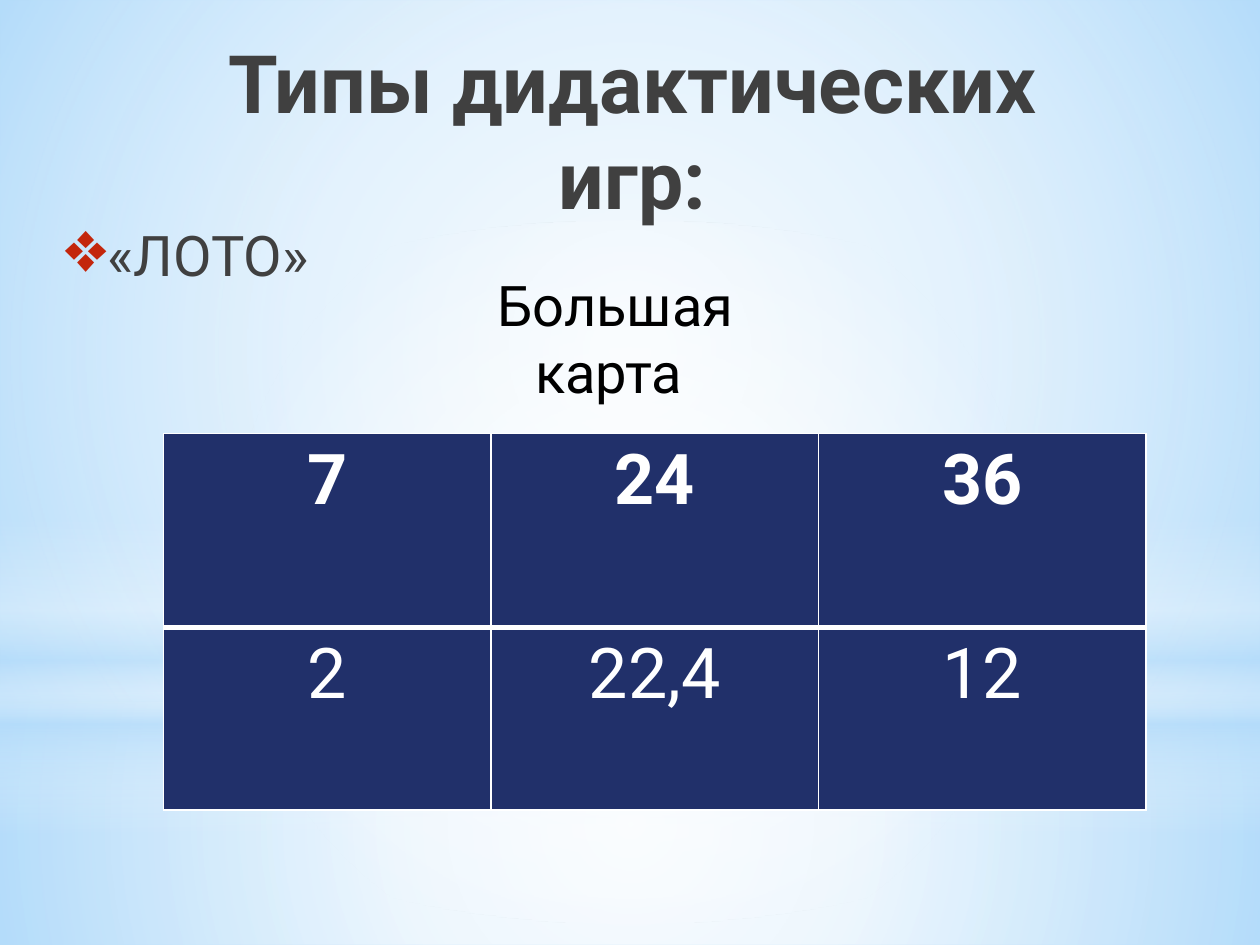
"""Build a slide about lotto as a type of didactic game."""
from lxml import etree
from pptx import Presentation
from pptx.dml.color import RGBColor
from pptx.enum.shapes import MSO_SHAPE
from pptx.enum.text import MSO_ANCHOR, MSO_AUTO_SIZE, PP_ALIGN
from pptx.oxml import parse_xml
from pptx.oxml.ns import nsdecls, qn
from pptx.util import Cm, Pt

RECTANGLE, OVAL = MSO_SHAPE.RECTANGLE, MSO_SHAPE.OVAL
CENTER, TOP, NO_AUTOFIT = PP_ALIGN.CENTER, MSO_ANCHOR.TOP, MSO_AUTO_SIZE.NONE
FONT = "Roboto"
COLORS = {
    "sky": "B4DCFA",
    "white": "FFFFFF",
    "gray": "404040",
    "black": "000000",
    "navy": "21306A",
    "red": "C3260C",
}
RADIAL = (
    '<a:path path="circle">'
    '<a:fillToRect l="50000" t="50000" r="50000" b="50000"/></a:path>'
)
VERTICAL = '<a:lin ang="5400000" scaled="0"/>'
BACKDROP = [
    (RECTANGLE, (0, 14.17, 25.4, 4.88), RADIAL,
     [(0, "white", 91), (37, "white", 76), (100, "sky", 79)]),
    (RECTANGLE, (0, 0, 25.4, 14.17), RADIAL,
     [(0, "white", 89), (48, "white", 62), (100, "sky", 79)]),
    (RECTANGLE, (0, 10.46, 25.4, 6.35), VERTICAL,
     [(0, "white", 0), (29, "white", 30), (45, "sky", 40),
      (55, "white", 26), (65, "sky", 60), (100, "white", 0)]),
    (OVAL, (0, 4.45, 25.4, 14.17), RADIAL,
     [(0, "white", 100), (56, "white", 0)]),
]
CARD = [["7", "24", "36"], ["2", "22,4", "12"]]
ROW_HEIGHTS = [3.91, 3.68]
COLUMN_WIDTH = 6.6


def color(name):
    return RGBColor.from_string(COLORS[name])


def lengths(box):
    return [Cm(value) for value in box]


def add_gradient_shape(slide, kind, box, direction, stops):
    shape = slide.shapes.add_shape(kind, *lengths(box))
    shape.shadow.inherit = False
    shape.line.fill.background()
    shape.fill.solid()
    stop_xml = "".join(
        f'<a:gs pos="{position * 1000}"><a:srgbClr val="{COLORS[name]}">'
        f'<a:alpha val="{opacity * 1000}"/></a:srgbClr></a:gs>'
        for position, name, opacity in stops
    )
    gradient = parse_xml(
        f'<a:gradFill {nsdecls("a")} rotWithShape="1">'
        f"<a:gsLst>{stop_xml}</a:gsLst>{direction}</a:gradFill>"
    )
    properties = shape.element.spPr
    properties.replace(properties.find(qn("a:solidFill")), gradient)


def write_text(frame, text, size, color_name, bold=False):
    frame.text = text
    paragraph = frame.paragraphs[0]
    paragraph.alignment = CENTER
    font = paragraph.font
    font.name, font.size, font.bold = FONT, Pt(size), bold
    font.color.rgb = color(color_name)
    return paragraph


def set_title(slide, text, box):
    title = slide.shapes.title
    title.left, title.top, title.width, title.height = lengths(box)
    frame = title.text_frame
    frame.word_wrap, frame.vertical_anchor = True, TOP
    frame.auto_size = NO_AUTOFIT
    write_text(frame, text, 46, "gray", bold=True)
    slide.shapes.element.append(title.element)


def add_text(slide, text, box, color_name):
    frame = slide.shapes.add_textbox(*lengths(box)).text_frame
    frame.word_wrap = True
    return write_text(frame, text, 32, color_name)


def add_bullet(paragraph):
    properties = paragraph.font._element.getparent()
    properties.set("marL", str(Cm(0.64)))
    properties.set("indent", str(-Cm(0.51)))
    bullet_color = etree.Element(qn("a:buClr"))
    etree.SubElement(bullet_color, qn("a:srgbClr"), val=COLORS["red"])
    parts = [
        bullet_color,
        etree.Element(qn("a:buSzPct"), val="130000"),
        etree.Element(qn("a:buChar"), char="❖"),
    ]
    for index, part in enumerate(parts):
        properties.insert(index, part)


def set_borders(cell, bottom_width):
    properties = cell._tc.get_or_add_tcPr()
    widths = {"lnL": 1, "lnR": 1, "lnT": 1, "lnB": bottom_width}
    for index, (side, width) in enumerate(widths.items()):
        line = etree.Element(qn(f"a:{side}"), w=str(Pt(width)))
        fill = etree.SubElement(line, qn("a:solidFill"))
        etree.SubElement(fill, qn("a:srgbClr"), val=COLORS["white"])
        properties.insert(index, line)


def add_card(slide, left, top):
    columns = len(CARD[0])
    box = (left, top, COLUMN_WIDTH * columns, sum(ROW_HEIGHTS))
    table = slide.shapes.add_table(len(CARD), columns, *lengths(box)).table
    table.horz_banding = False
    for column in table.columns:
        column.width = Cm(COLUMN_WIDTH)
    for row_index, values in enumerate(CARD):
        is_header = row_index == 0
        table.rows[row_index].height = Cm(ROW_HEIGHTS[row_index])
        for column_index, value in enumerate(values):
            cell = table.cell(row_index, column_index)
            cell.fill.solid()
            cell.fill.fore_color.rgb = color("navy")
            set_borders(cell, 3 if is_header else 1)
            write_text(cell.text_frame, value, 40, "white", bold=is_header)
    for cell in table.iter_cells():
        cell.vertical_anchor = TOP


def main():
    presentation = Presentation()
    presentation.slide_width, presentation.slide_height = Cm(25.4), Cm(19.05)
    slide = presentation.slides.add_slide(presentation.slide_layouts[5])
    slide.background.fill.solid()
    slide.background.fill.fore_color.rgb = color("sky")
    for layer in BACKDROP:
        add_gradient_shape(slide, *layer)
    set_title(slide, "Типы дидактических игр:", (3.71, 0.53, 18.08, 3.18))
    game = add_text(slide, "«ЛОТО»", (0.51, 4.32, 6.4, 3.2), "gray")
    game.space_after = Pt(3)
    add_bullet(game)
    game_card_top = 8.74
    add_card(slide, 3.3, game_card_top)
    add_text(slide, "Большая карта ", (8.31, 5.33, 8.2, 3), "black")
    presentation.save("out.pptx")


if __name__ == "__main__":
    main()
